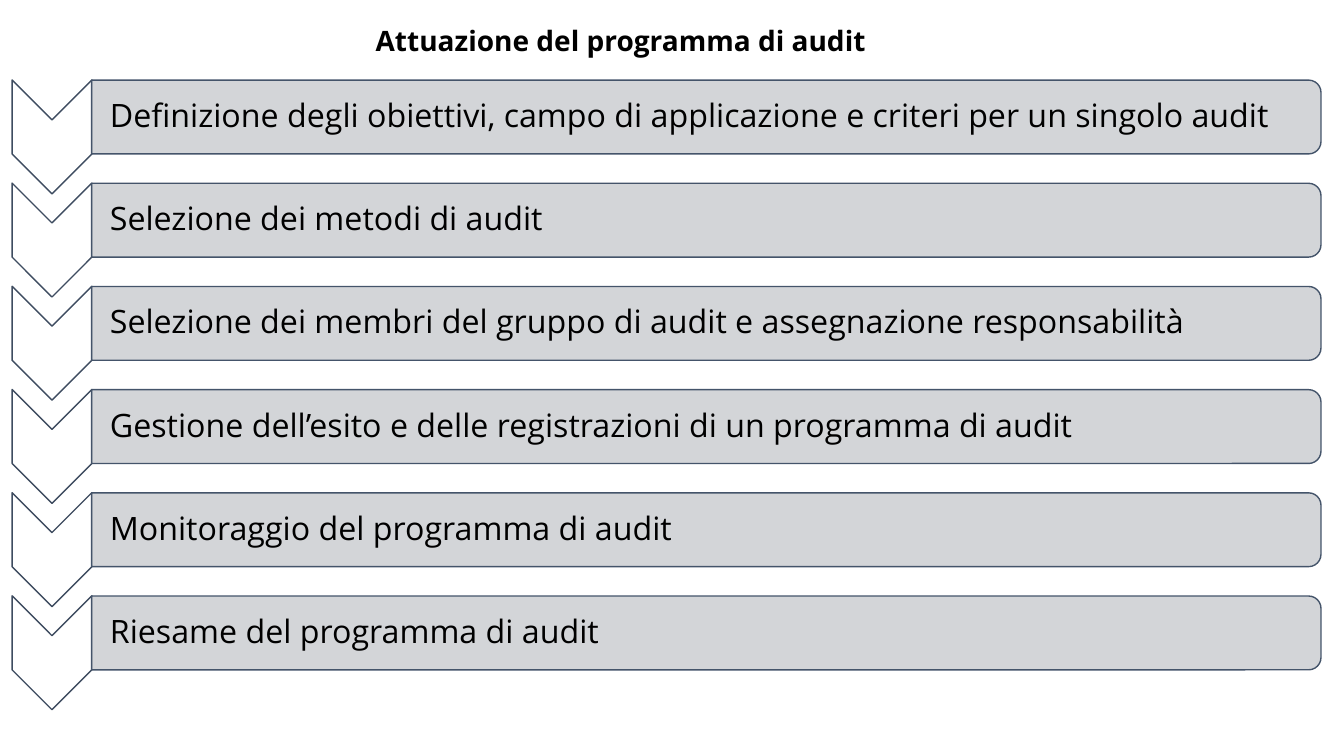
from pptx import Presentation
from pptx.dml.color import RGBColor
from pptx.enum.shapes import MSO_SHAPE as Preset
from pptx.enum.text import MSO_ANCHOR as Anchor, MSO_AUTO_SIZE as AutoSize, PP_ALIGN as Align
from pptx.oxml.ns import qn
from pptx.util import Cm, Pt
from lxml import etree

WHITE = RGBColor(0xFF, 0xFF, 0xFF)
BLACK = RGBColor(0x00, 0x00, 0x00)
BAR_GREY = RGBColor(0xCF, 0xD1, 0xD4)
BAR_LINE = RGBColor(0x44, 0x54, 0x6A)
CHEVRON_LINE = RGBColor(0x3E, 0x4C, 0x60)
FONT = "Open Sans"

FIRST_ROW_MIDDLE = 2.95
ROW_STEP = 2.6
CHEVRON_DROP = 0.5

TITLE = "Attuazione del programma di audit"
STEPS = [
    "Definizione degli obiettivi, campo di applicazione e criteri per un singolo audit",
    "Selezione dei metodi di audit",
    "Selezione dei membri del gruppo di audit e assegnazione responsabilità",
    "Gestione dell’esito e delle registrazioni di un programma di audit",
    "Monitoraggio del programma di audit",
    "Riesame del programma di audit",
]


def format_font(para, size, bold=False):
    for span in para.runs:
        span.font.name = FONT
        span.font.size = Pt(size)
        span.font.bold = bold
        span.font.color.rgb = BLACK


def set_opacity(shape, percent):
    color = shape.fill._xPr.find(qn("a:solidFill"))[0]
    etree.SubElement(color, qn("a:alpha")).set("val", str(percent * 1000))


def add_turned_shape(page, preset, center, size, fill, line):
    """Add a preset shape turned a quarter clockwise; center and size are in cm."""
    (x, y), (width, height) = center, size
    shape = page.shapes.add_shape(
        preset, Cm(x - width / 2), Cm(y - height / 2), Cm(width), Cm(height))
    shape.rotation = 90
    shape.shadow.inherit = False
    shape.fill.solid()
    shape.fill.fore_color.rgb = fill
    shape.line.color.rgb = line
    shape.line.width = Pt(1)
    return shape


def add_label(page, text, middle):
    height = 1.68
    box = page.shapes.add_textbox(Cm(2.31), Cm(middle - height / 2), Cm(30.89), Cm(height))
    frame = box.text_frame
    frame.word_wrap = True
    frame.vertical_anchor = Anchor.MIDDLE
    frame.margin_left = Cm(0.46)
    frame.margin_top = frame.margin_right = frame.margin_bottom = Cm(0.05)
    frame.text = text
    para = frame.paragraphs[0]
    para.line_spacing = 0.9
    format_font(para, 23)


def add_step(page, text, middle):
    add_turned_shape(page, Preset.CHEVRON, (1.31, middle + CHEVRON_DROP), (2.87, 2.01),
                     WHITE, CHEVRON_LINE)
    bar = add_turned_shape(page, Preset.ROUND_2_SAME_RECTANGLE, (17.8, middle),
                           (1.86, 30.98), BAR_GREY, BAR_LINE)
    set_opacity(bar, 90)
    add_label(page, text, middle)


def set_title(page):
    title = page.shapes.title
    title.left, title.top, title.width, title.height = Cm(6.02), Cm(0.46), Cm(19.25), Cm(1.12)
    frame = title.text_frame
    frame.text = TITLE
    frame.auto_size = AutoSize.NONE
    frame.word_wrap = True
    frame.vertical_anchor = Anchor.MIDDLE
    para = frame.paragraphs[0]
    para.alignment = Align.CENTER
    format_font(para, 20, bold=True)


def main():
    deck = Presentation()
    deck.slide_width, deck.slide_height = Cm(33.87), Cm(19.05)
    page = deck.slides.add_slide(deck.slide_layouts.get_by_name("Title Only"))
    set_title(page)
    for row, text in enumerate(STEPS):
        add_step(page, text, FIRST_ROW_MIDDLE + row * ROW_STEP)
    deck.save("out.pptx")


if __name__ == "__main__":
    main()
